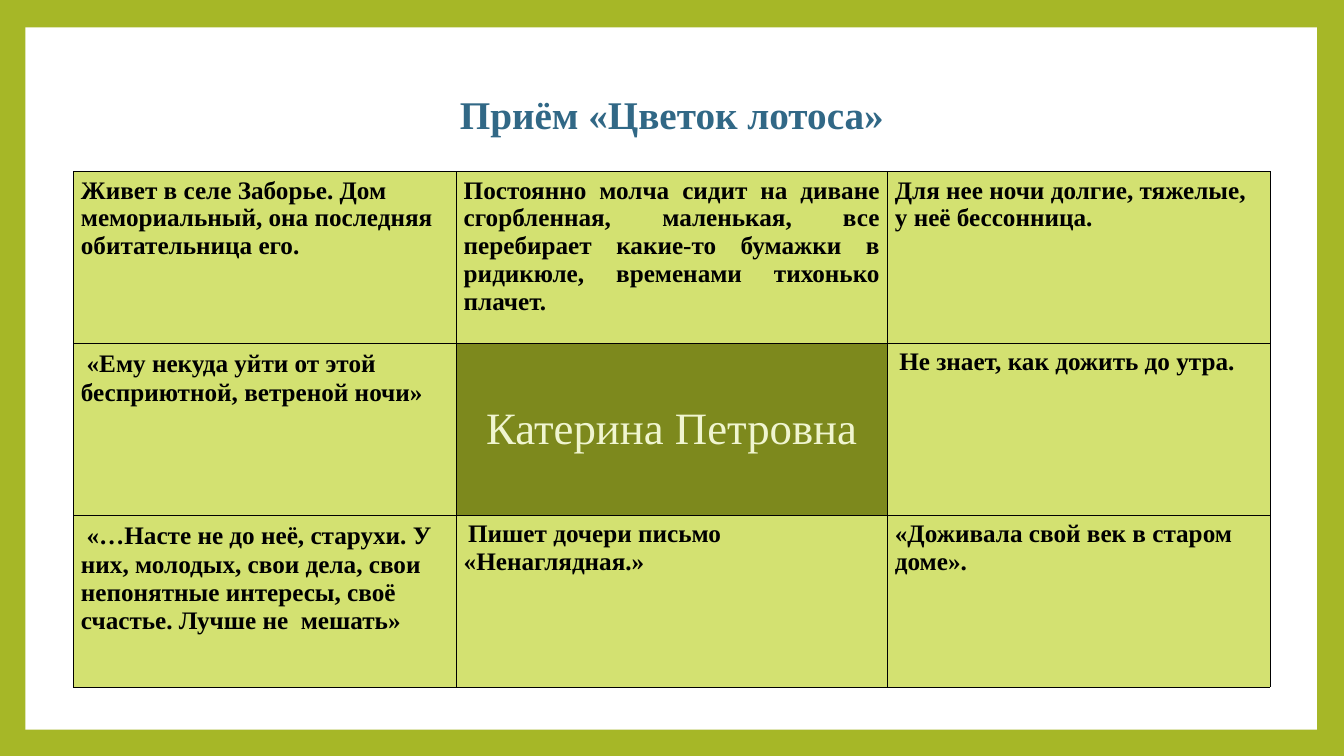
import pptx
import pptx.dml.color
import pptx.enum.shapes
import pptx.enum.text
import pptx.oxml
import pptx.oxml.ns
import pptx.util

Cm = pptx.util.Cm
Align = pptx.enum.text.PP_ALIGN
Anchor = pptx.enum.text.MSO_ANCHOR

COLORS = {
    "frame": "A6B727",
    "panel": "FFFFFF",
    "title": "316886",
    "petal": "D3E171",
    "heart": "7D891D",
    "heart_text": "F0F5D0",
    "text": "000000",
    "border": "000000",
}
COLUMN_WIDTHS = (9.65, 10.87, 9.65)
ROW_HEIGHT = 4.33
LEFT = 1.85

# Text formats
SERIF = {"name": "Times New Roman", "size": pptx.util.Pt(18), "bold": True}
TITLE = {**SERIF, "size": pptx.util.Pt(28)}
HEART = {**SERIF, "size": pptx.util.Pt(32), "bold": False}
LEAD = {**SERIF, "name": "Calibri"}
SMALL_LEAD = {**LEAD, "size": pptx.util.Pt(14), "bold": False}

# Each cell is a list of (text, format) runs
PETALS = [
    [
        [("Живет в селе Заборье. Дом мемориальный, она последняя обитательница его.", SERIF)],
        [("Постоянно молча сидит на диване сгорбленная, маленькая, все перебирает "
          "какие-то бумажки в ридикюле, временами тихонько плачет.", SERIF)],
        [("Для нее ночи долгие, тяжелые, у неё бессонница.", SERIF)],
    ],
    [
        [(" ", LEAD), ("«Ему некуда уйти от этой бесприютной, ветреной ночи»", SERIF)],
        [("Катерина Петровна", HEART)],
        [(" ", SMALL_LEAD), ("Не знает, как дожить до утра.", SERIF)],
    ],
    [
        [(" ", LEAD), ("«…Насте не до неё, старухи. У них, молодых, свои дела, свои "
                       "непонятные интересы, своё счастье. Лучше не  мешать»", SERIF)],
        [(" ", SMALL_LEAD), ("Пишет дочери письмо «Ненаглядная.»", SERIF)],
        [("«Доживала свой век в старом доме».", SERIF)],
    ],
]


def rgb(color):
    return pptx.dml.color.RGBColor.from_string(COLORS[color])


def set_fill(fill, color):
    fill.solid()
    fill.fore_color.rgb = rgb(color)


def add_runs(paragraph, runs, color, alignment):
    paragraph.alignment = alignment
    for text, text_format in runs:
        run = paragraph.add_run()
        run.text = text
        for attribute, value in text_format.items():
            setattr(run.font, attribute, value)
        run.font.color.rgb = rgb(color)


def add_panel(slide):
    panel = slide.shapes.add_shape(
        pptx.enum.shapes.MSO_SHAPE.RECTANGLE, Cm(0.64), Cm(0.69), Cm(32.56), Cm(17.7))
    panel.shadow.inherit = False
    set_fill(panel.fill, "panel")
    panel.line.fill.background()


def add_title(slide, text):
    box = slide.shapes.add_textbox(Cm(LEFT), Cm(2.16), Cm(sum(COLUMN_WIDTHS)), Cm(2))
    box.text_frame.word_wrap = True
    add_runs(box.text_frame.paragraphs[0], [(text, TITLE)], "title", Align.CENTER)


def add_borders(cell):
    properties = cell._tc.get_or_add_tcPr()
    for position, side in enumerate(("lnL", "lnR", "lnT", "lnB")):
        border = pptx.oxml.parse_xml(
            f'<a:{side} {pptx.oxml.ns.nsdecls("a")} w="{pptx.util.Pt(0.45)}"><a:solidFill>'
            f'<a:srgbClr val="{COLORS["border"]}"/></a:solidFill></a:{side}>')
        properties.insert(position, border)


def style_cell(cell, runs, fill, color, alignment, anchor):
    margins = {"margin_left": 0.19, "margin_right": 0.19,
               "margin_top": 0.13, "margin_bottom": 0.13}
    for attribute, value in margins.items():
        setattr(cell, attribute, Cm(value))
    cell.vertical_anchor = anchor
    set_fill(cell.fill, fill)
    add_borders(cell)
    add_runs(cell.text_frame.paragraphs[0], runs, color, alignment)


def add_lotus_table(slide):
    row_count = len(PETALS)
    table = slide.shapes.add_table(
        row_count, len(COLUMN_WIDTHS), Cm(LEFT), Cm(4.32),
        Cm(sum(COLUMN_WIDTHS)), Cm(ROW_HEIGHT * row_count)).table
    table.first_row = table.horz_banding = False
    for column, width in zip(table.columns, COLUMN_WIDTHS):
        column.width = Cm(width)
    for row_index, row in enumerate(PETALS):
        table.rows[row_index].height = Cm(ROW_HEIGHT)
        for column_index, runs in enumerate(row):
            cell = table.cell(row_index, column_index)
            if (row_index, column_index) == (1, 1):
                style_cell(cell, runs, "heart", "heart_text", Align.CENTER, Anchor.MIDDLE)
            else:
                justified = (row_index, column_index) == (0, 1)
                alignment = Align.JUSTIFY if justified else Align.LEFT
                style_cell(cell, runs, "petal", "text", alignment, Anchor.TOP)


def main():
    presentation = pptx.Presentation()
    presentation.slide_width = Cm(33.88)
    presentation.slide_height = Cm(19.05)
    slide = presentation.slides.add_slide(presentation.slide_layouts[6])

    # Green frame around a white panel
    set_fill(slide.background.fill, "frame")
    add_panel(slide)

    # Title and lotus table
    add_title(slide, "Приём «Цветок лотоса»")
    add_lotus_table(slide)
    presentation.save("out.pptx")


if __name__ == "__main__":
    main()
